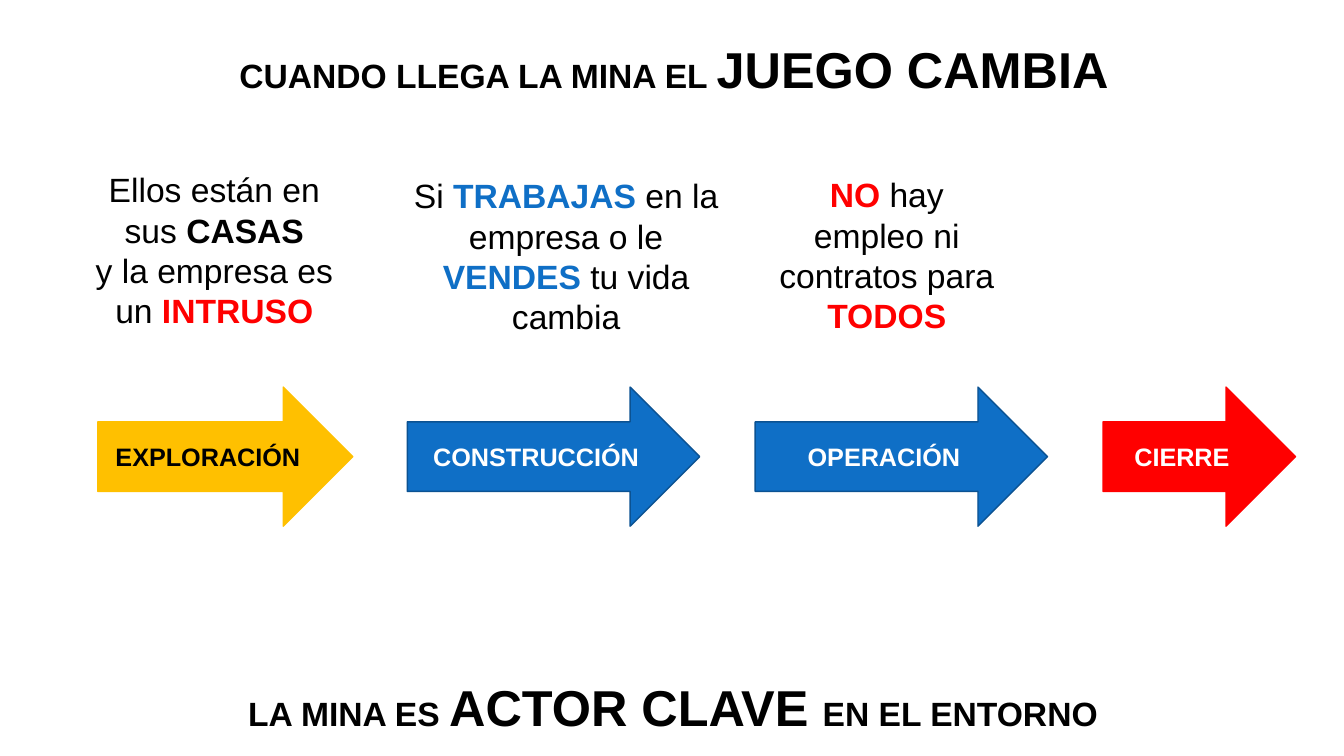
from dataclasses import dataclass

from pptx import Presentation
from pptx.dml.color import RGBColor
from pptx.enum.shapes import MSO_SHAPE as SHAPE
from pptx.enum.text import MSO_ANCHOR as ANCHOR, MSO_AUTO_SIZE as AUTO, PP_ALIGN as ALIGN
from pptx.util import Inches, Pt


@dataclass(frozen=True)
class Theme:
    font: str = "Arial"
    black: str = "000000"
    white: str = "FFFFFF"
    blue: str = "0F6FC6"
    navy: str = "0B5292"
    amber: str = "FFC000"
    red: str = "FF0000"
    label: int = 18
    body: int = 24
    big: int = 36
    leading: float = 28.8


T = Theme()
SLIDE_W, SLIDE_H = 13.33, 7.5
ARROW_TOP, ARROW_H = 3.84, 1.38
NOTE_H = 1.04

# Note runs are (text, accent colour or None); accented runs are bold.
NOTES = [
    ((0.75, 1.96, 2.75), [[("Ellos están en sus ", None), ("CASAS", T.black)],
                          [("y la empresa es un ", None), ("INTRUSO", T.red)]]),
    ((3.93, 2.02, 3.37), [[("Si ", None), ("TRABAJAS ", T.blue), ("en la empresa o le ", None),
                           ("VENDES", T.blue), (" tu vida cambia", None)]]),
    ((7.62, 2.01, 2.35), [[("NO", T.red), (" hay empleo ni contratos para ", None),
                           ("TODOS", T.red)]]),
]
# Stage: label, left, width, fill, line, text colour
STAGES = [
    ("EXPLORACIÓN", 0.97, 2.53, T.amber, T.amber, T.black),
    ("CONSTRUCCIÓN", 4.04, 2.9, T.blue, T.navy, T.white),
    ("OPERACIÓN", 7.49, 2.9, T.blue, T.navy, T.white),
    ("CIERRE", 10.94, 1.91, T.red, T.red, T.white),
]


def rgb(color):
    return RGBColor.from_string(color)


def inches(box):
    return [Inches(v) for v in box]


def setup_frame(tf):
    tf.word_wrap = True
    tf.auto_size = AUTO.NONE
    tf.vertical_anchor = ANCHOR.MIDDLE


def format_paragraph(p, size, color=T.black, bold=None):
    p.alignment = ALIGN.CENTER
    p.font.name, p.font.size, p.font.bold = T.font, Pt(size), bold
    p.font.color.rgb = rgb(color)


def fill_headline(shape, box, runs):
    """Bold centred line whose runs are (text, size)."""
    shape.left, shape.top, shape.width, shape.height = inches(box)
    tf = shape.text_frame
    setup_frame(tf)
    p = tf.paragraphs[0]
    format_paragraph(p, T.body, bold=True)
    for text, size in runs:
        r = p.add_run()
        r.text, r.font.size = text, Pt(size)


def add_note(s, box, paragraphs):
    tf = s.shapes.add_textbox(*inches(box)).text_frame
    setup_frame(tf)
    for i, runs in enumerate(paragraphs):
        p = tf.add_paragraph() if i else tf.paragraphs[0]
        format_paragraph(p, T.body)
        p.line_spacing = Pt(T.leading)
        for text, accent in runs:
            r = p.add_run()
            r.text = text
            if accent:
                r.font.bold = True
                r.font.color.rgb = rgb(accent)


def add_stage(s, box, label, fill, line, color):
    sp = s.shapes.add_shape(SHAPE.RIGHT_ARROW, *inches(box))
    sp.shadow.inherit = False
    sp.fill.solid()
    sp.fill.fore_color.rgb = rgb(fill)
    sp.line.color.rgb = rgb(line)
    sp.line.width = Pt(1)
    setup_frame(sp.text_frame)
    p = sp.text_frame.paragraphs[0]
    p.text = label
    format_paragraph(p, T.label, color, bold=True)


def build_slide(prs):
    s = prs.slides.add_slide(prs.slide_layouts.get_by_name("Title Only"))
    fill_headline(s.shapes.title, (0.02, 0.22, SLIDE_W, 0.92),
                  [("CUANDO LLEGA LA MINA EL ", T.body), ("JUEGO CAMBIA", T.big)])
    for place, paragraphs in NOTES:
        add_note(s, (*place, NOTE_H), paragraphs)
    for label, left, width, fill, line, color in STAGES:
        add_stage(s, (left, ARROW_TOP, width, ARROW_H), label, fill, line, color)
    closing = s.shapes.add_textbox(0, 0, 0, 0)
    fill_headline(closing, (0.01, 6.55, SLIDE_W, 0.92),
                  [("LA MINA ES ", T.body), ("ACTOR CLAVE ", T.big), ("EN EL ENTORNO", T.body)])


def main():
    prs = Presentation()
    prs.slide_width, prs.slide_height = Inches(SLIDE_W), Inches(SLIDE_H)
    build_slide(prs)
    prs.save("out.pptx")


if __name__ == "__main__":
    main()
